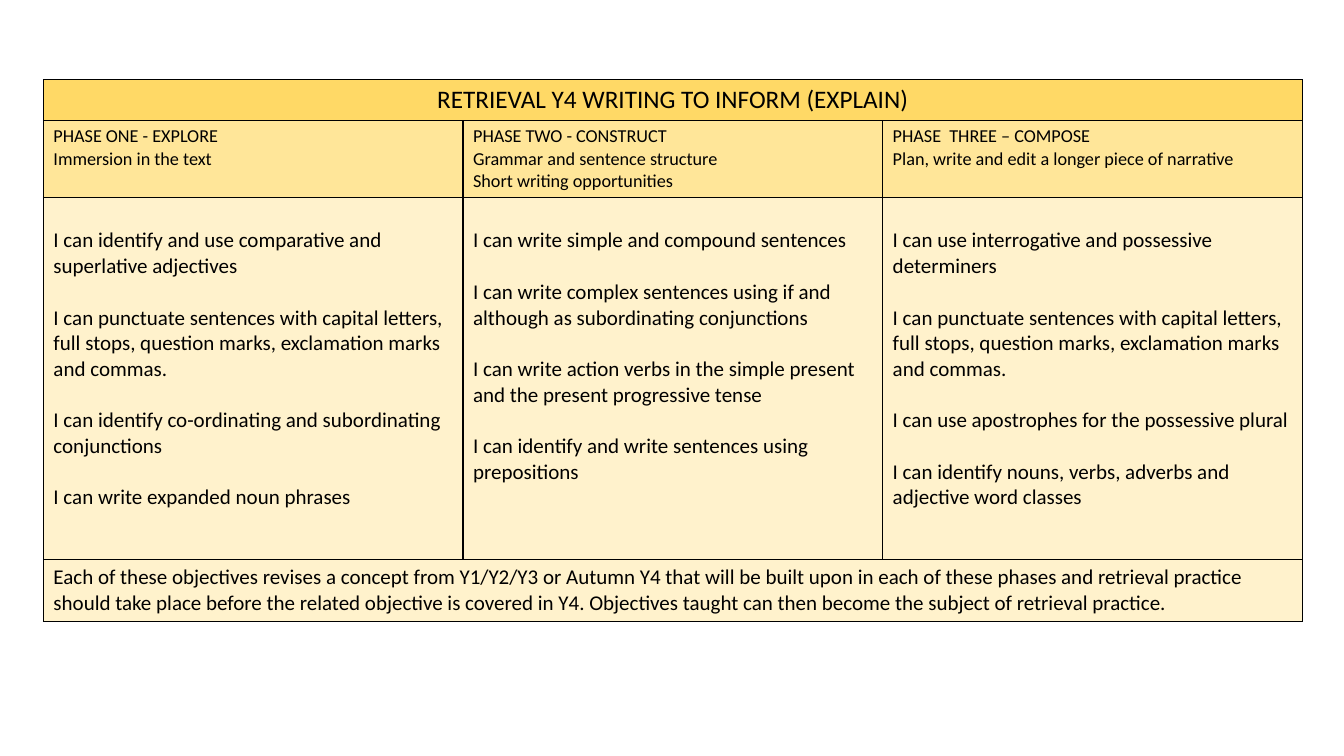
from dataclasses import dataclass

from lxml.etree import SubElement
from pptx import Presentation
from pptx.dml.color import RGBColor
from pptx.enum.text import PP_ALIGN
from pptx.oxml.ns import qn
from pptx.table import Table, _Cell
from pptx.util import Pt

BLACK = RGBColor(0x00, 0x00, 0x00)
GOLD = RGBColor(0xFF, 0xD9, 0x66)
AMBER = RGBColor(0xFF, 0xE6, 0x99)
CREAM = RGBColor(0xFF, 0xF2, 0xCC)

FONT = "Calibri"
LEFT, TOP = 31, 56.9
COL_WIDTH = 299.75
ROW_HEIGHTS = (29.3, 53.9, 258.9, 43.6)
CELL_MARGIN = 3.6
OBJECTIVE_GAP = 18.3


@dataclass(frozen=True)
class CellStyle:
    fill: RGBColor
    size: float
    align: PP_ALIGN = PP_ALIGN.LEFT
    gap: float = 0


@dataclass(frozen=True)
class Phase:
    heading: tuple[str, ...]
    objectives: tuple[str, ...]


TITLE_STYLE = CellStyle(GOLD, 18, PP_ALIGN.CENTER)
HEADING_STYLE = CellStyle(AMBER, 13)
OBJECTIVE_STYLE = CellStyle(CREAM, 15, gap=OBJECTIVE_GAP)
NOTE_STYLE = CellStyle(CREAM, 15)

TITLE = "RETRIEVAL Y4 WRITING TO INFORM (EXPLAIN)"
NOTE = (
    "Each of these objectives revises a concept from Y1/Y2/Y3 or Autumn Y4 that will be "
    "built upon in each of these phases and retrieval practice should take place before "
    "the related objective is covered in Y4. Objectives taught can then become the "
    "subject of retrieval practice."
)
PUNCTUATION = (
    "I can punctuate sentences with capital letters, full stops, question marks, "
    "exclamation marks and commas."
)
PHASES = (
    Phase(
        ("PHASE ONE - EXPLORE", "Immersion in the text"),
        (
            "I can identify and use comparative and superlative adjectives",
            PUNCTUATION,
            "I can identify co-ordinating and subordinating conjunctions",
            "I can write expanded noun phrases",
        ),
    ),
    Phase(
        (
            "PHASE TWO - CONSTRUCT",
            "Grammar and sentence structure",
            "Short writing opportunities",
        ),
        (
            "I can write simple and compound sentences",
            "I can write complex sentences using if and although as subordinating conjunctions",
            "I can write action verbs in the simple present and the present progressive tense",
            "I can identify and write sentences using prepositions",
        ),
    ),
    Phase(
        ("PHASE  THREE – COMPOSE", "Plan, write and edit a longer piece of narrative"),
        (
            "I can use interrogative and possessive determiners",
            PUNCTUATION,
            "I can use apostrophes for the possessive plural",
            "I can identify nouns, verbs, adverbs and adjective word classes",
        ),
    ),
)


def add_borders(cell: _Cell) -> None:
    tc_pr = cell._tc.get_or_add_tcPr()
    for i, side in enumerate(("a:lnL", "a:lnR", "a:lnT", "a:lnB")):
        ln = SubElement(tc_pr, qn(side), w=str(Pt(1)))
        fill = SubElement(ln, qn("a:solidFill"))
        SubElement(fill, qn("a:srgbClr"), val=str(BLACK))
        tc_pr.insert(i, ln)  # borders come before the fill


def fill_cell(cell: _Cell, lines: tuple[str, ...], style: CellStyle) -> None:
    cell.margin_top = Pt(CELL_MARGIN + style.gap)
    tf = cell.text_frame
    tf.text = "\n".join(lines)
    for i, p in enumerate(tf.paragraphs):
        p.alignment = style.align
        p.space_before = Pt(style.gap if i else 0)
        p.font.name = FONT
        p.font.size = Pt(style.size)
        p.font.color.rgb = BLACK


def fill_table(table: Table) -> None:
    last = len(PHASES) - 1
    for row, text, style in ((0, TITLE, TITLE_STYLE), (3, NOTE, NOTE_STYLE)):
        table.cell(row, 0).merge(table.cell(row, last))
        fill_cell(table.cell(row, 0), (text,), style)
    for col, phase in enumerate(PHASES):
        fill_cell(table.cell(1, col), phase.heading, HEADING_STYLE)
        fill_cell(table.cell(2, col), phase.objectives, OBJECTIVE_STYLE)

    row_styles = (TITLE_STYLE, HEADING_STYLE, OBJECTIVE_STYLE, NOTE_STYLE)
    for row, height, style in zip(table.rows, ROW_HEIGHTS, row_styles):
        row.height = Pt(height)
        for cell in row.cells:
            cell.fill.solid()
            cell.fill.fore_color.rgb = style.fill
            add_borders(cell)


def main() -> None:
    prs = Presentation()
    prs.slide_width, prs.slide_height = Pt(960), Pt(540)
    s = prs.slides.add_slide(prs.slide_layouts[6])
    table = s.shapes.add_table(
        len(ROW_HEIGHTS), len(PHASES), Pt(LEFT), Pt(TOP),
        Pt(COL_WIDTH * len(PHASES)), Pt(sum(ROW_HEIGHTS)),
    ).table
    table.first_row = False
    table.horz_banding = False
    fill_table(table)
    prs.save("out.pptx")


if __name__ == "__main__":
    main()
